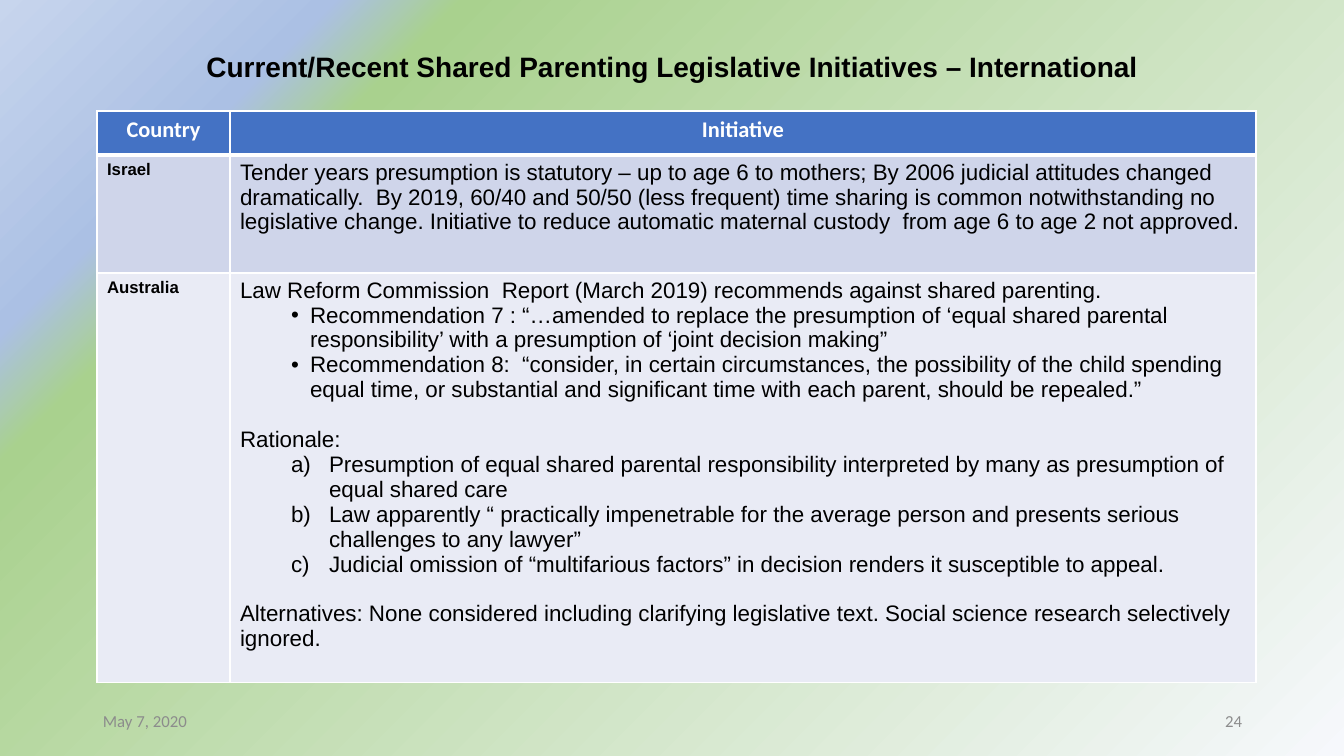
from lxml import etree
from pptx import Presentation
from pptx.dml.color import RGBColor
from pptx.enum.text import MSO_ANCHOR, PP_ALIGN
from pptx.oxml.ns import qn
from pptx.util import Emu, Pt

LEFT, CENTER, RIGHT = PP_ALIGN.LEFT, PP_ALIGN.CENTER, PP_ALIGN.RIGHT
MIDDLE = MSO_ANCHOR.MIDDLE
WIDTH, HEIGHT = 1344, 756
SCALE = 12192000 / WIDTH
COLORS = {
    "text": "000000",
    "white": "FFFFFF",
    "footer": "8C8C8C",
    "header": "4472C4",
    "band_dark": "CFD5EA",
    "band_light": "E9EBF5",
}
BACKDROP = [(0, "F6F8FC"), (78, "A9D18E"), (84, "ABC0E4"), (100, "C7D5ED")]
COLUMNS = [133, 1026]
ROWS = [44, 118, 376]
BULLET = (70, -19, "buChar", {"char": "•"})
LETTER = (89, -38, "buAutoNum", {"type": "alphaLcParenR"})
GAP = 17.9

ISRAEL = [
    ("Tender years presumption is statutory – up to age 6 to mothers; By 2006 judicial attitudes changed "
     "dramatically.  By 2019, 60/40 and 50/50 (less frequent) time sharing is common notwithstanding no "
     "legislative change. Initiative to reduce automatic maternal custody  from age 6 to age 2 not approved.",
     None, 0),
]
AUSTRALIA = [
    ("Law Reform Commission  Report (March 2019) recommends against shared parenting.", None, 0),
    ("Recommendation 7 : “…amended to replace the presumption of ‘equal shared parental "
     "responsibility’ with a presumption of ‘joint decision making”", BULLET, 0),
    ("Recommendation 8:  “consider, in certain circumstances, the possibility of the child spending "
     "equal time, or substantial and significant time with each parent, should be repealed.”", BULLET, 0),
    ("Rationale:", None, GAP),
    ("Presumption of equal shared parental responsibility interpreted by many as presumption of "
     "equal shared care", LETTER, 0),
    ("Law apparently “ practically impenetrable for the average person and presents serious "
     "challenges to any lawyer”", LETTER, 0),
    ("Judicial omission of “multifarious factors” in decision renders it susceptible to appeal.", LETTER, 0),
    ("Alternatives: None considered including clarifying legislative text. Social science research "
     "selectively ignored.", None, GAP),
]


def px(value):
    return Emu(round(value * SCALE))


def add_span(para, text, size, font="Arial", color="text", bold=False):
    span = para.add_run()
    span.text = text
    span.font.size = Pt(size)
    span.font.name = font
    span.font.bold = bold
    span.font.color.rgb = RGBColor.from_string(COLORS[color])


def add_label(page, left, top, width, height, text, align, size, **style):
    box = page.shapes.add_textbox(px(left), px(top), px(width), px(height))
    frame = box.text_frame
    frame.word_wrap = True
    frame.vertical_anchor = MIDDLE
    para = frame.paragraphs[0]
    para.alignment = align
    add_span(para, text, size, **style)


def add_color(parent, color):
    return etree.SubElement(parent, qn("a:srgbClr"), val=color)


def paint_backdrop(page):
    page.background.fill.gradient()
    gradient = page.element.find(".//" + qn("a:gradFill"))
    for child in list(gradient):
        gradient.remove(child)
    stops = etree.SubElement(gradient, qn("a:gsLst"))
    for position, color in BACKDROP:
        add_color(etree.SubElement(stops, qn("a:gs"), pos=str(position * 1000)), color)
    circle = etree.SubElement(gradient, qn("a:path"))
    circle.set("path", "circle")
    etree.SubElement(circle, qn("a:fillToRect"), l="100000", t="100000")


def style_cell(cell, fill, bottom=1):
    properties = cell._tc.get_or_add_tcPr()
    for side, points in (("L", 1), ("R", 1), ("T", 1), ("B", bottom)):
        line = etree.SubElement(properties, qn("a:ln" + side), w=str(Pt(points)))
        add_color(etree.SubElement(line, qn("a:solidFill")), COLORS["white"])
    cell.fill.solid()
    cell.fill.fore_color.rgb = RGBColor.from_string(COLORS[fill])


def mark_item(para, marker):
    margin, indent, tag, attributes = marker
    properties = para._p.get_or_add_pPr()
    properties.set("marL", str(px(margin)))
    properties.set("indent", str(px(indent)))
    etree.SubElement(properties, qn("a:buFont"), typeface="Arial")
    etree.SubElement(properties, qn("a:" + tag), attributes)


def fill_initiative(cell, items):
    frame = cell.text_frame
    for index, (text, marker, gap) in enumerate(items):
        para = frame.add_paragraph() if index else frame.paragraphs[0]
        para.space_before = Pt(gap)
        if marker:
            para.level = 1
            mark_item(para, marker)
        add_span(para, text, 16)


def add_initiatives(page):
    table = page.shapes.add_table(
        len(ROWS), len(COLUMNS), px(97), px(111), px(sum(COLUMNS)), px(sum(ROWS))
    ).table
    for column, width in zip(table.columns, COLUMNS):
        column.width = px(width)
    for row, height in zip(table.rows, ROWS):
        row.height = px(height)
    for cell, heading in zip(table.rows[0].cells, ("Country", "Initiative")):
        style_cell(cell, "header", bottom=3)
        para = cell.text_frame.paragraphs[0]
        para.alignment = CENTER
        add_span(para, heading, 16, font="Calibri", color="white", bold=True)
    countries = [("Israel", ISRAEL, "band_dark"), ("Australia", AUSTRALIA, "band_light")]
    for number, (country, items, fill) in enumerate(countries, 1):
        name_cell, initiative_cell = table.rows[number].cells
        style_cell(name_cell, fill)
        style_cell(initiative_cell, fill)
        add_span(name_cell.text_frame.paragraphs[0], country, 12, bold=True)
        fill_initiative(initiative_cell, items)


def main():
    deck = Presentation()
    deck.slide_width, deck.slide_height = px(WIDTH), px(HEIGHT)
    page = deck.slides.add_slide(deck.slide_layouts[6])
    paint_backdrop(page)
    add_label(page, 93, 40, 1159, 52,
              "Current/Recent Shared Parenting Legislative Initiatives – International",
              CENTER, 20, bold=True)
    add_initiatives(page)
    for left, text, align in ((93, "May 7, 2020", LEFT), (950, "24", RIGHT)):
        add_label(page, left, 701, 302, 40, text, align, 12, font="Calibri", color="footer")
    deck.save("out.pptx")


if __name__ == "__main__":
    main()
